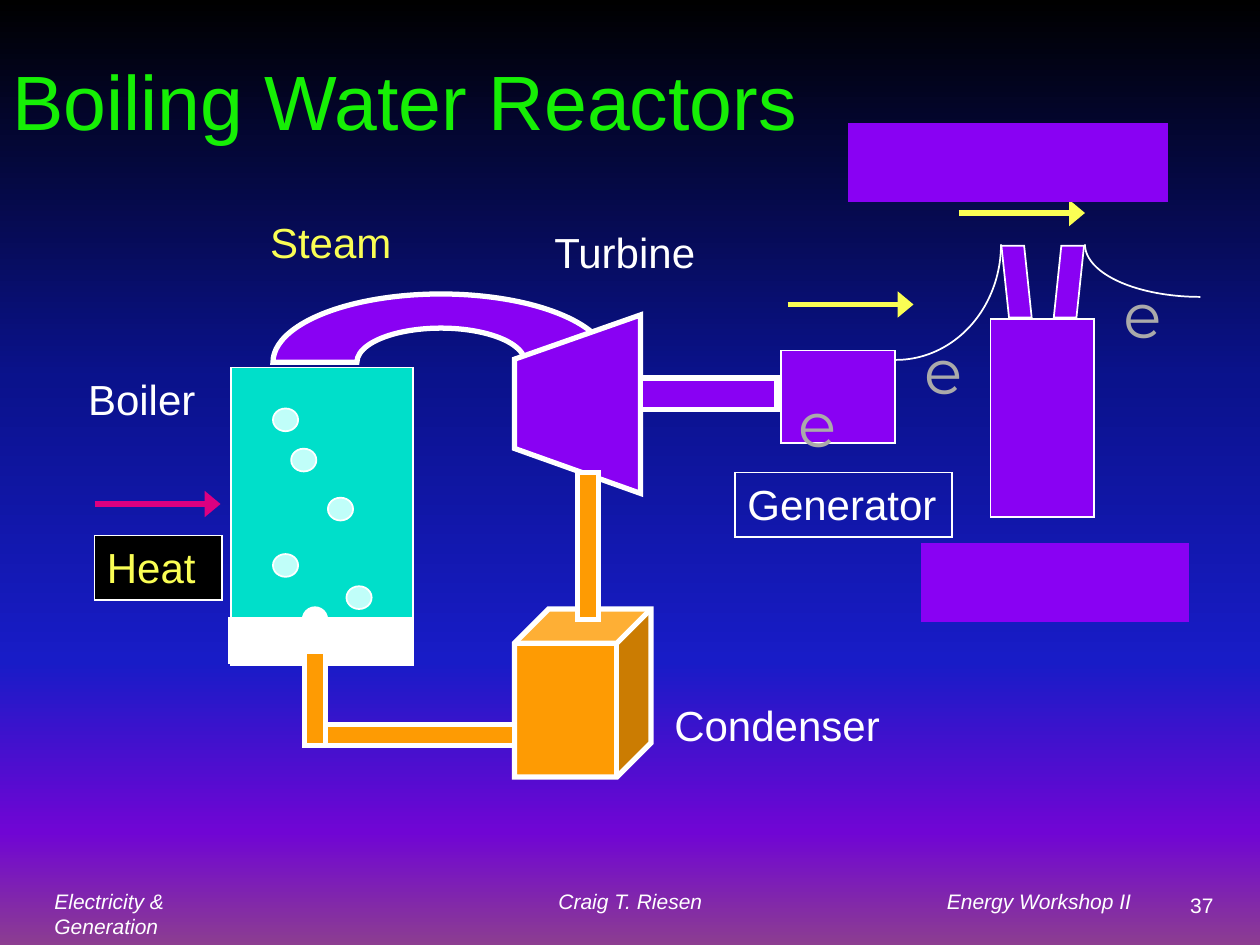
from lxml.etree import SubElement
from pptx import Presentation
from pptx.dml.color import RGBColor
from pptx.enum.shapes import MSO_CONNECTOR as Link, MSO_SHAPE as Kind
from pptx.enum.text import MSO_ANCHOR as Anchor, MSO_AUTO_SIZE as Fit, PP_ALIGN as Align
from pptx.oxml.ns import qn
from pptx.util import Pt

WHITE = RGBColor(0xFF, 0xFF, 0xFF)
BLACK = RGBColor(0x00, 0x00, 0x00)
GREEN = RGBColor(0x16, 0xEF, 0x05)
YELLOW = RGBColor(0xFA, 0xFE, 0x54)
PINK = RGBColor(0xDC, 0x00, 0x81)
PURPLE = RGBColor(0x89, 0x01, 0xF3)
ORANGE = RGBColor(0xFE, 0x9B, 0x03)
TEAL = RGBColor(0x00, 0xDF, 0xCA)
FOAM = RGBColor(0xC0, 0xFE, 0xF9)
GRAY = RGBColor(0xAA, 0xAA, 0xAA)
SKY = [(0, "000000"), (40, "0A128C"), (70, "181CC7"), (88, "7005D4"), (100, "8C3D91")]


class Board:
    def __init__(self, slide, font="Arial"):
        self.slide = slide
        self.shapes = slide.shapes
        self.font = font

    def sky(self, stops):
        fill = self.slide.background.fill
        fill.gradient()
        fill.gradient_angle = 270
        group = self.slide.element.find(".//" + qn("a:gsLst"))
        for stop in list(group):
            group.remove(stop)
        for place, shade in stops:
            stop = SubElement(group, qn("a:gs"), pos=str(place * 1000))
            SubElement(stop, qn("a:srgbClr"), val=shade)

    def paint(self, shape, fill, line, width=1):
        if fill is None:
            shape.fill.background()
        else:
            shape.fill.solid()
            shape.fill.fore_color.rgb = fill
        shape.line.color.rgb = line
        shape.line.width = Pt(width)
        SubElement(shape.line._get_or_add_ln(), qn("a:miter"), lim="800000")

    def shape(self, kind, at, fill, line=WHITE, width=1):
        item = self.shapes.add_shape(kind, *map(Pt, at))
        item.shadow.inherit = False
        self.paint(item, fill, line, width)
        return item

    def free(self, points, fill=None, width=1, bends=None):
        """Outline through points; bends maps a side to (rx, ry, start, sweep)."""
        spots = [(Pt(x), Pt(y)) for x, y in points]
        pen = self.shapes.build_freeform(*spots[0], scale=1.0)
        pen.add_line_segments(spots[1:], close=fill is not None)
        item = pen.convert_to_shape()
        item.shadow.inherit = False
        self.paint(item, fill, WHITE, width)
        sides = item._element.findall(".//" + qn("a:lnTo"))
        for i, (rx, ry, start, sweep) in (bends or {}).items():
            side = sides[i]
            side.clear()
            side.tag = qn("a:arcTo")
            side.set("wR", str(Pt(rx)))
            side.set("hR", str(Pt(ry)))
            side.set("stAng", str(start * 60000))
            side.set("swAng", str(sweep * 60000))

    def arrow(self, x, y, color):
        item = self.shapes.add_connector(Link.STRAIGHT, Pt(x), Pt(y), Pt(x + 72), Pt(y))
        item.line.color.rgb = color
        item.line.width = Pt(3)
        SubElement(item.line._get_or_add_ln(), qn("a:tailEnd"), type="triangle", w="lg", len="med")
        SubElement(item._element.spPr, qn("a:effectLst"))

    def style(self, frame, size, color, align=Align.LEFT, italic=False, font=None):
        for para in frame.paragraphs:
            para.alignment = align
            para.font.name = font or self.font
            para.font.size = Pt(size)
            para.font.color.rgb = color
            para.font.italic = italic

    def text(self, words, at, size=24, color=WHITE, align=Align.LEFT, wrap=True, **look):
        item = self.shapes.add_textbox(*map(Pt, at))
        item.text_frame.word_wrap = wrap
        item.text_frame.text = words
        self.style(item.text_frame, size, color, align, **look)
        return item

    def tab(self, item, place):
        props = item.text_frame.paragraphs[0]._p.get_or_add_pPr()
        stops = props.makeelement(qn("a:tabLst"))
        SubElement(stops, qn("a:tab"), pos=str(Pt(place)), algn="l")
        props.find(qn("a:defRPr")).addprevious(stops)

    def title(self, words, at, size, color):
        item = self.shapes.title
        item.left, item.top, item.width, item.height = map(Pt, at)
        frame = item.text_frame
        frame.text = words
        frame.auto_size = Fit.NONE
        frame.vertical_anchor = Anchor.MIDDLE
        self.style(frame, size, color)


def main():
    deck = Presentation()
    deck.slide_width, deck.slide_height = Pt(720), Pt(540)
    board = Board(deck.slides.add_slide(deck.slide_layouts[5]))
    board.sky(SKY)
    board.title("Boiling Water Reactors", (0, 12, 474, 90.5), 44, GREEN)

    # Footer
    board.text("Electricity &\vGeneration", (24, 504, 140, 22), 12, italic=True)
    foot = board.text("Craig T. Riesen\tEnergy Workshop II", (312, 504, 348, 22), 12, italic=True)
    board.tab(foot, 222)
    board.text("37", (673, 506.4, 29, 22), 12, wrap=False)

    # Boiler, heat and bubbles
    board.shape(Kind.RECTANGLE, (132, 210, 104, 170), TEAL)
    heat = board.text("Heat", (54, 306, 73, 37), color=YELLOW)
    board.paint(heat, BLACK, WHITE)
    board.arrow(54, 288, PINK)
    for x, y in [(166.4, 256.4), (187.4, 284.4), (156, 316.6), (156, 233.4), (198, 335)]:
        board.shape(Kind.OVAL, (x, y, 14.4, 13), FOAM)

    # Generator and transformer
    board.shape(Kind.RECTANGLE, (446.4, 200.3, 65, 53), PURPLE)
    board.shape(Kind.RECTANGLE, (566, 182.3, 59, 113), PURPLE)
    for x, flip in [(572.3, "1"), (602.2, "0")]:
        leg = board.shape(Kind.PARALLELOGRAM, (x, 140.4, 17.3, 41), PURPLE)
        leg.adjustments[0] = 0.25
        leg._element.spPr.xfrm.set("flipH", flip)
    board.free([(572, 139.7), (512, 205.7)], bends={0: (60, 66, 0, 90)})
    board.free([(686, 169.7), (620, 139.7)], bends={0: (66, 30, 90, 90)})
    sign = board.text("Generator", (420, 270, 124, 37), wrap=False)
    board.paint(sign, None, WHITE)
    board.arrow(548, 121.7, YELLOW)
    board.arrow(450, 174, YELLOW)

    # Water level, steam pipe and turbine
    board.shape(Kind.RECTANGLE, (132, 354, 102, 24), WHITE, width=3)
    outer, inner = (96, 39), (48, 19.5)
    pipe = [(156, 207), (252, 168), (348, 207), (300, 207), (252, 187.5), (204, 207)]
    turns = {0: (*outer, 180, 90), 1: (*outer, 270, 90), 3: (*inner, 0, -90), 4: (*inner, 270, -90)}
    board.free(pipe, PURPLE, 3, turns)
    board.free([(366, 180), (294, 205.3), (294, 256.3), (366, 282)], PURPLE, 3)

    # Condenser, return pipes and shaft
    board.shape(Kind.CUBE, (294, 348, 78, 96), ORANGE, width=3)
    for at in [(330, 270, 12, 84), (186, 414, 108, 12), (174, 372, 12, 54)]:
        board.shape(Kind.RECTANGLE, at, ORANGE, width=3)
    board.shape(Kind.RECTANGLE, (366, 216, 78, 18), PURPLE, width=3)
    board.shape(Kind.OVAL, (174, 348, 12, 12), WHITE, width=3)

    # Plain panels
    for at in [(528, 312, 150, 42), (486, 72, 180, 42)]:
        board.shape(Kind.RECTANGLE, at, PURPLE, PURPLE, 3)

    # Labels
    for words, at, color in [
        ("Steam", (132, 120, 114, 36), YELLOW),
        ("Turbine", (306, 126, 102, 36), WHITE),
        ("Condenser", (342, 396, 204, 36), WHITE),
        ("Boiler", (36, 210, 90, 36), WHITE),
    ]:
        board.text(words, at, color=color, align=Align.CENTER)

    # Electrons
    for x, y in [(456, 216), (528, 186), (642, 154)]:
        mark = board.text("e", (x, y, 18, 26), 36, GRAY, Align.CENTER, False, font="Montserrat")
        mark.text_frame.margin_left = mark.text_frame.margin_right = 0

    deck.save("out.pptx")


if __name__ == "__main__":
    main()
